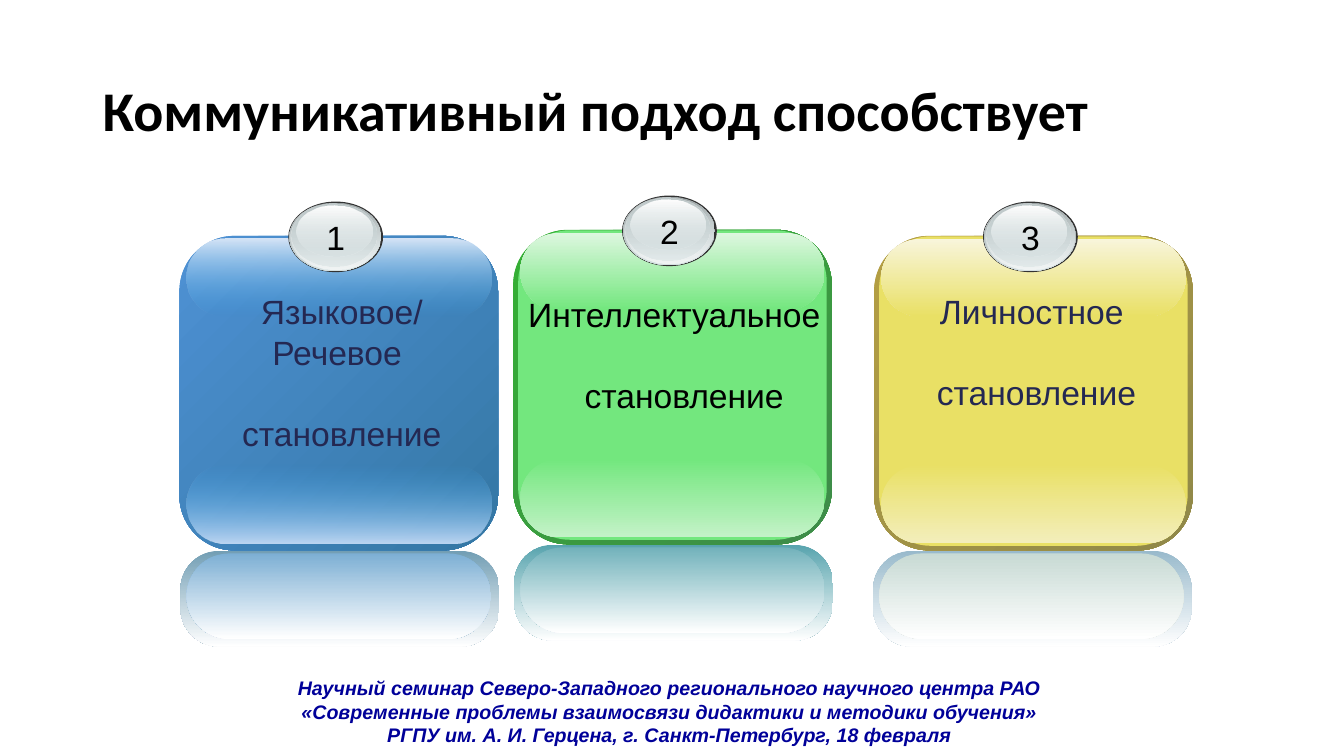
import dataclasses

import lxml.etree
import pptx
import pptx.dml.color
import pptx.enum.shapes
import pptx.enum.text
import pptx.oxml.ns
import pptx.util

SHAPE = pptx.enum.shapes.MSO_SHAPE
ALIGN = pptx.enum.text.PP_ALIGN
ANCHOR = pptx.enum.text.MSO_ANCHOR
FIT = pptx.enum.text.MSO_AUTO_SIZE


@dataclasses.dataclass(frozen=True)
class Theme:
    heading_font: str = "Calibri"
    body_font: str = "Arial"
    heading_size: int = 40
    body_size: int = 24
    footer_size: int = 14
    blank_line: float = 29
    black: str = "000000"
    white: str = "FFFFFF"
    navy: str = "242852"
    footer: str = "000099"
    rim: str = "333333"
    steel: str = "99A1A2"
    silver: str = "D6E1E2"
    mist: str = "C1CBCC"
    pearl: str = "F2F5F5"


THEME = Theme()
COLUMNS, ROWS = 133.3, 75


@dataclasses.dataclass(frozen=True)
class Card:
    number: str
    left: float
    top: float
    frame: tuple
    face: str
    top_glow: tuple
    bottom_glow: tuple
    mirror: str
    mirror_face: str
    mirror_shift: float
    label: tuple
    lines: tuple
    ink: str
    first_align: ALIGN = ALIGN.CENTER


CARDS = (
    Card("1", 17.8, 23.4, ("4E91D4", "3477A4"), "",
         ("D7E5F7", ("3CA1E6", 0)), (("3CA1E6", 0), "BDD6F3"),
         "729EB4", "7DAFD4", 0.1, (1.1, 5, 30, 17.2),
         ("Языковое/", "Речевое ", "становление"), THEME.navy),
    Card("2", 50.9, 22.8, ("34B034", "3F8B4A"), "73E77E",
         ("DDF7DF", "73E77E"), ("73E77E", "C3F2C7"),
         "58A4AE", "72B2BB", 0.1, (0.5, 5.9, 32.9, 13.1),
         ("Интеллектуальное", "становление"), THEME.black, ALIGN.LEFT),
    Card("3", 86.7, 23.4, ("B59F43", "8F8849"), "E9E065",
         ("F8F5DB", "E9E065"), ("E9E065", "F3EEBB"),
         "99BACC", "C8DAD4", -0.1, (1.1, 5, 30, 13.1),
         ("Личностное ", "становление"), THEME.navy),
)

BADGE_LAYERS = (
    (0, 0, 9.4, 7, (THEME.rim,)),
    (0.1, 0.1, 9.1, 6.8, (THEME.steel, THEME.silver)),
    (0.2, 0.1, 8.9, 6.6, ((THEME.silver, 0), THEME.pearl)),
    (0.3, 0.2, 8.4, 6.2, (THEME.mist, (THEME.silver, 48))),
    (0.8, 0.4, 7.5, 5, (THEME.white, (THEME.silver, 38))),
)


class Painter:
    """Draws styled elements on the current slide, measured in grid columns and rows."""

    def __init__(self, deck, theme):
        self.theme = theme
        self.column = deck.slide_width / COLUMNS
        self.row = deck.slide_height / ROWS
        self.page = deck.slides.add_slide(deck.slide_layouts[6])

    def place(self, left, top, width, height):
        return [round(size * step) for size, step in
                zip((left, top, width, height), (self.column, self.row) * 2)]

    def shape(self, kind, area, colors, angle=90, corner=None):
        shape = self.page.shapes.add_shape(kind, *self.place(*area))
        shape.shadow.inherit = False
        shape.line.fill.background()
        if corner is not None:
            shape.adjustments[0] = corner
        if len(colors) == 1:
            shape.fill.solid()
            shape.fill.fore_color.rgb = pptx.dml.color.RGBColor.from_string(colors[0])
            return
        shape.fill.gradient()
        shape.fill.gradient_angle = 360 - angle
        pairs = [(color, 100) if isinstance(color, str) else color for color in colors]
        for stop, (color, _) in zip(shape.fill.gradient_stops, pairs):
            stop.color.rgb = pptx.dml.color.RGBColor.from_string(color)
        tints = shape.element.spPr.findall(".//" + pptx.oxml.ns.qn("a:srgbClr"))
        for tint, (_, opacity) in zip(tints, pairs):
            if opacity < 100:
                alpha = lxml.etree.SubElement(tint, pptx.oxml.ns.qn("a:alpha"))
                alpha.set("val", str(opacity * 1000))

    def block(self, area, colors, corner, angle=90):
        self.shape(SHAPE.ROUNDED_RECTANGLE, area, colors, angle, corner)

    def text(self, area, lines, size, color, font=None, align=ALIGN.CENTER,
             bold=None, italic=None, wrap=True, fit=FIT.SHAPE_TO_FIT_TEXT):
        box = self.page.shapes.add_textbox(*self.place(*area))
        frame = box.text_frame
        frame.text = "\n".join(lines)
        frame.word_wrap = wrap
        frame.auto_size = fit
        for para in frame.paragraphs:
            para.alignment = align
            for span in para.runs:
                span.font.name = font or self.theme.body_font
                span.font.size = pptx.util.Pt(size)
                span.font.bold = bold
                span.font.italic = italic
                span.font.color.rgb = pptx.dml.color.RGBColor.from_string(color)
        return frame

    def title(self, area, words):
        frame = self.text(area, [words], self.theme.heading_size, self.theme.black,
                          self.theme.heading_font, ALIGN.LEFT, bold=True, fit=FIT.NONE)
        frame.vertical_anchor = ANCHOR.MIDDLE
        frame.paragraphs[0].line_spacing = 0.9

    def footer(self, area, lines):
        self.text(area, ["\v".join(lines)], self.theme.footer_size,
                  self.theme.footer, bold=True, italic=True)

    def badge(self, left, top, number):
        for right, down, width, height, colors in BADGE_LAYERS:
            self.shape(SHAPE.OVAL, (left + right, top + down, width, height), colors)
        self.text((left + 2.1, top + 1, 5.2, 5), [number],
                  self.theme.body_size, self.theme.black, wrap=False)

    def card(self, card):
        left, top = card.left, card.top
        self.block((left, top, 31.6, 31.2), card.frame, 0.175, angle=45)
        if card.face:
            self.block((left + 0.5, top + 0.05, 30.6, 30.7), (card.face,), 0.167)
        self.block((left + 0.7, top + 22.7, 30.2, 7.8), card.bottom_glow, 0.5)
        self.block((left + 0.7, top + 0.3, 30.2, 7.7), card.top_glow, 0.5)
        mirror = left + card.mirror_shift
        self.block((mirror, top + 31.25, 31.6, 9.5), (card.mirror, self.theme.white), 0.404)
        self.block((mirror + 0.6, top + 31.5, 30.2, 8.5),
                   (card.mirror_face, self.theme.white), 0.5)
        self.badge(left + 10.8, top - 3.4, card.number)
        right, down, width, height = card.label
        frame = self.text((left + right, top + down, width, height), card.lines,
                          self.theme.body_size, card.ink)
        frame.paragraphs[0].alignment = card.first_align
        frame.paragraphs[-1].space_before = pptx.util.Pt(self.theme.blank_line)


def main():
    deck = pptx.Presentation()
    deck.slide_width = pptx.util.Inches(13.33)
    deck.slide_height = pptx.util.Inches(7.5)
    painter = Painter(deck, THEME)
    painter.title((9.2, 4, 115, 14.5), "Коммуникативный подход способствует")
    for card in CARDS:
        painter.card(card)
    painter.footer((1.8, 66.6, 129.2, 8), (
        "Научный семинар Северо-Западного регионального научного центра РАО",
        "«Современные проблемы взаимосвязи дидактики и методики обучения»",
        "РГПУ им. А. И. Герцена, г. Санкт-Петербург, 18 февраля",
    ))
    deck.save("out.pptx")


if __name__ == "__main__":
    main()
